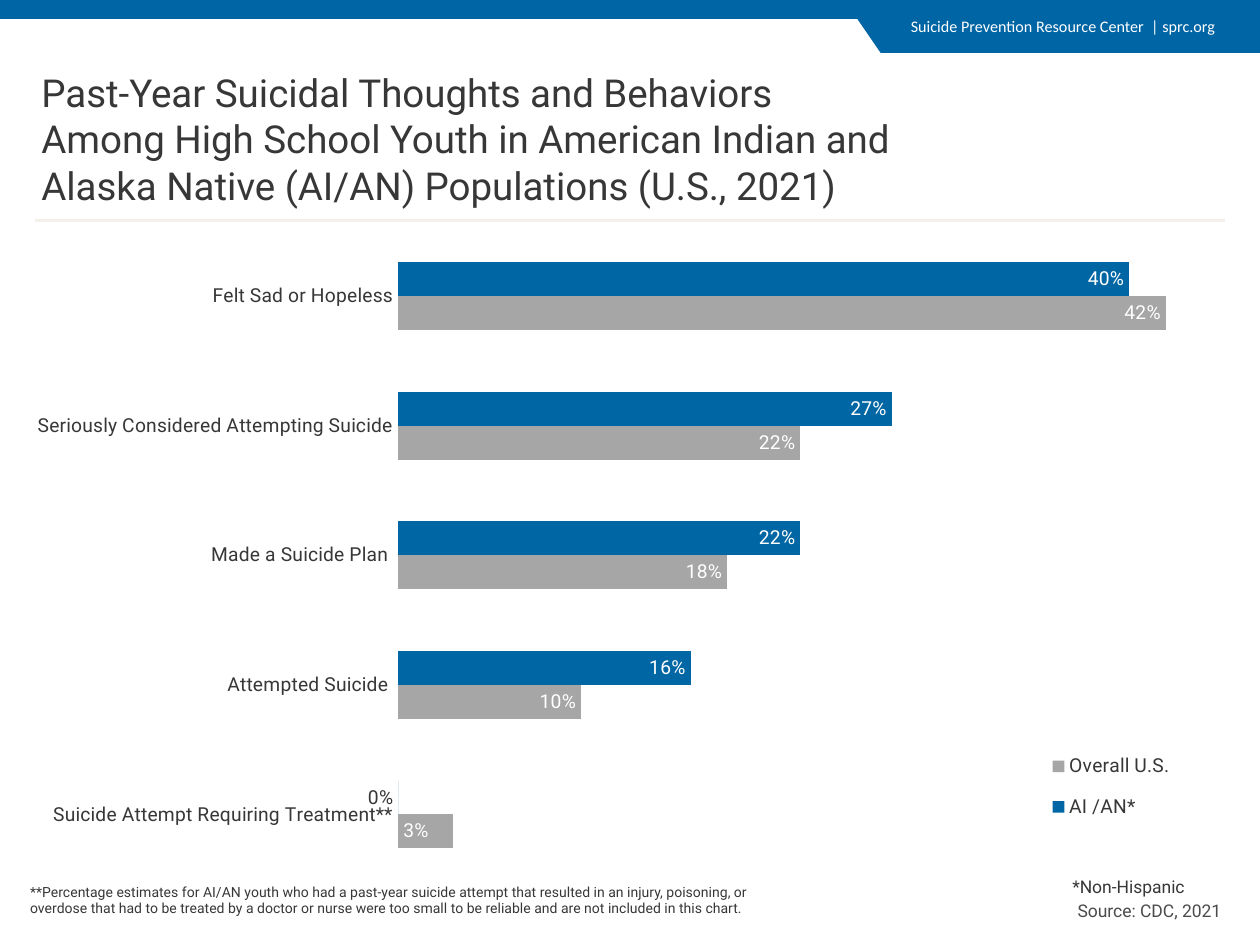
from dataclasses import dataclass

from lxml.etree import SubElement
from pptx import Presentation
from pptx.chart.data import CategoryChartData
from pptx.dml.color import RGBColor
from pptx.enum.chart import XL_CHART_TYPE, XL_LABEL_POSITION, XL_LEGEND_POSITION, XL_TICK_MARK
from pptx.enum.shapes import MSO_CONNECTOR, MSO_SHAPE
from pptx.enum.text import MSO_ANCHOR, PP_ALIGN
from pptx.oxml import parse_xml
from pptx.oxml.ns import nsdecls, qn
from pptx.util import Inches, Pt

WIDTH, HEIGHT = 10, 7.5


@dataclass(frozen=True)
class Theme:
    brand: str = "0065A4"
    native: str = "0066A4"
    overall: str = "A6A6A6"
    ink: str = "373737"
    source: str = "4B4B4B"
    rule: str = "F3F0EA"
    white: str = "FFFFFF"
    body_font: str = "Roboto"
    header_font: str = "Calibri"
    chart_font: str = "Cabin"
    title_size: float = 22
    chart_size: float = 11
    note_size: float = 10
    header_size: float = 9.2
    footnote_size: float = 8


THEME = Theme()

# text, (left, top, width, height), size, colour, font, alignment, anchor
LEFT, RIGHT = PP_ALIGN.LEFT, PP_ALIGN.RIGHT
TOP, MIDDLE = MSO_ANCHOR.TOP, MSO_ANCHOR.MIDDLE
TEXTS = [
    ("Suicide Prevention Resource Center  | sprc.org", (7.13, 0.08, 2.95, 0.41),
     THEME.header_size, THEME.white, THEME.header_font, LEFT, TOP),
    ("Past-Year Suicidal Thoughts and Behaviors Among High School Youth in American "
     "Indian and Alaska Native (AI/AN) Populations (U.S., 2021)", (0.23, 0.45, 7.02, 1.3),
     THEME.title_size, THEME.ink, THEME.body_font, LEFT, MIDDLE),
    ("Source: CDC, 2021", (7.57, 7.09, 2.22, 0.27),
     THEME.note_size, THEME.source, THEME.body_font, RIGHT, TOP),
    ("*Non-Hispanic", (8.33, 6.9, 1.17, 0.27),
     THEME.note_size, THEME.ink, THEME.body_font, RIGHT, TOP),
    ("**Percentage estimates for AI/AN youth who had a past-year suicide attempt that "
     "resulted in an injury, poisoning, or overdose that had to be treated by a doctor or "
     "nurse were too small to be reliable and are not included in this chart.",
     (0.14, 6.96, 5.92, 0.37),
     THEME.footnote_size, THEME.ink, THEME.body_font, LEFT, TOP),
]

CATEGORIES = ["Felt Sad or Hopeless", "Seriously Considered Attempting Suicide",
              "Made a Suicide Plan ", "Attempted Suicide ",
              "Suicide Attempt Requiring Treatment**"]
# name, values, bar colour, colour and position of the last bar's label
SERIES = [
    ("AI /AN* ", (0.40, 0.27, 0.22, 0.16, 0), THEME.native,
     THEME.ink, XL_LABEL_POSITION.INSIDE_END),
    ("Overall U.S. ", (0.42, 0.22, 0.18, 0.10, 0.03), THEME.overall,
     THEME.white, XL_LABEL_POSITION.INSIDE_BASE),
]
CHART_BOX = (0.23, 1.79, 9.46, 5.21)
# shares of the chart's width and height
PLOT_LAYOUT = (0.31, 0.009, 0.69, 0.987)
LEGEND_LAYOUT = (0.84, 0.78, 0.14, 0.15)
TAB = [(10, 0.1), (10, 0.42), (6.99, 0.42), (6.77, 0.1)]
RULE = (0.28, 1.75, 9.72, 1.75)


def inches(lengths):
    return [Inches(length) for length in lengths]


def paint(shape, color):
    shape.shadow.inherit = False
    shape.fill.solid()
    shape.fill.fore_color.rgb = RGBColor.from_string(color)
    shape.line.fill.background()


def style(font, size, color, name=THEME.body_font):
    font.size = Pt(size)
    font.name = name
    font.bold = False
    font.color.rgb = RGBColor.from_string(color)


def add_banner(page):
    paint(page.shapes.add_shape(MSO_SHAPE.RECTANGLE, *inches((0, 0, WIDTH, 0.15))), THEME.brand)
    start, *others = [tuple(inches(point)) for point in TAB]
    builder = page.shapes.build_freeform(*start)
    builder.add_line_segments(others, close=True)
    paint(builder.convert_to_shape(), THEME.brand)


def add_text(page, text, place, size, color, font, alignment, anchor):
    box = page.shapes.add_textbox(*inches(place))
    frame = box.text_frame
    frame.word_wrap = True
    frame.vertical_anchor = anchor
    para = frame.paragraphs[0]
    para.alignment = alignment
    span = para.add_run()
    span.text = text
    style(span.font, size, color, font)


def add_rule(page):
    rule = page.shapes.add_connector(MSO_CONNECTOR.STRAIGHT, *inches(RULE))
    rule.line.color.rgb = RGBColor.from_string(THEME.rule)
    rule.line.width = Pt(2.25)
    SubElement(rule._element.spPr, qn("a:effectLst"))


def manual_layout(shares, inner=False):
    target = '<c:layoutTarget val="inner"/>' if inner else ""
    modes = "".join(f'<c:{axis}Mode val="edge"/>' for axis in "xy")
    sizes = "".join(f'<c:{key} val="{share}"/>' for key, share in zip("xywh", shares))
    return parse_xml(f'<c:layout {nsdecls("c")}><c:manualLayout>{target}{modes}{sizes}'
                     "</c:manualLayout></c:layout>")


def place_layout(parent, layout, before):
    """Swap any layout of the parent for this one, ahead of the named child."""
    for old in parent.findall(qn("c:layout")):
        parent.remove(old)
    parent.find(qn(before)).addprevious(layout)


def style_series(series, color, last_color, last_position):
    series.format.fill.solid()
    series.format.fill.fore_color.rgb = RGBColor.from_string(color)
    series.invert_if_negative = False
    labels = series.data_labels
    labels.show_value = True
    labels.number_format = "0%"
    labels.number_format_is_linked = False
    labels.position = XL_LABEL_POSITION.INSIDE_END
    style(labels.font, THEME.chart_size, THEME.white)
    last = series.points[len(CATEGORIES) - 1].data_label
    style(last.font, THEME.chart_size, last_color)
    last.position = last_position


def add_bars(page):
    data = CategoryChartData(number_format="0%")
    data.categories = CATEGORIES
    for name, values, *_ in SERIES:
        data.add_series(name, values)
    chart = page.shapes.add_chart(XL_CHART_TYPE.BAR_CLUSTERED, *inches(CHART_BOX), data).chart
    style(chart.font, THEME.note_size, THEME.ink, THEME.chart_font)
    chart.has_title = False

    plot = chart.plots[0]
    plot.vary_by_categories = False
    plot.gap_width = 182
    plot.overlap = 0
    for series, (_, _, *look) in zip(plot.series, SERIES):
        style_series(series, *look)

    names = chart.category_axis
    names.reverse_order = True
    names.major_tick_mark = XL_TICK_MARK.NONE
    names.format.line.fill.background()
    style(names.tick_labels.font, THEME.chart_size, THEME.ink)
    scale = chart.value_axis
    scale.minimum_scale, scale.maximum_scale = 0, 0.45
    scale.has_major_gridlines = False
    scale.visible = False

    chart.has_legend = True
    legend = chart.legend
    legend.position = XL_LEGEND_POSITION.BOTTOM
    legend.include_in_layout = False
    style(legend.font, THEME.chart_size, THEME.ink)
    place_layout(legend._element, manual_layout(LEGEND_LAYOUT), "c:overlay")
    plot_area = chart._chartSpace.chart.plotArea
    place_layout(plot_area, manual_layout(PLOT_LAYOUT, inner=True), "c:barChart")


def main():
    deck = Presentation()
    deck.slide_width, deck.slide_height = inches((WIDTH, HEIGHT))
    page = deck.slides.add_slide(deck.slide_layouts[6])
    add_banner(page)
    for text in TEXTS:
        add_text(page, *text)
    add_rule(page)
    add_bars(page)
    deck.save("out.pptx")


if __name__ == "__main__":
    main()
